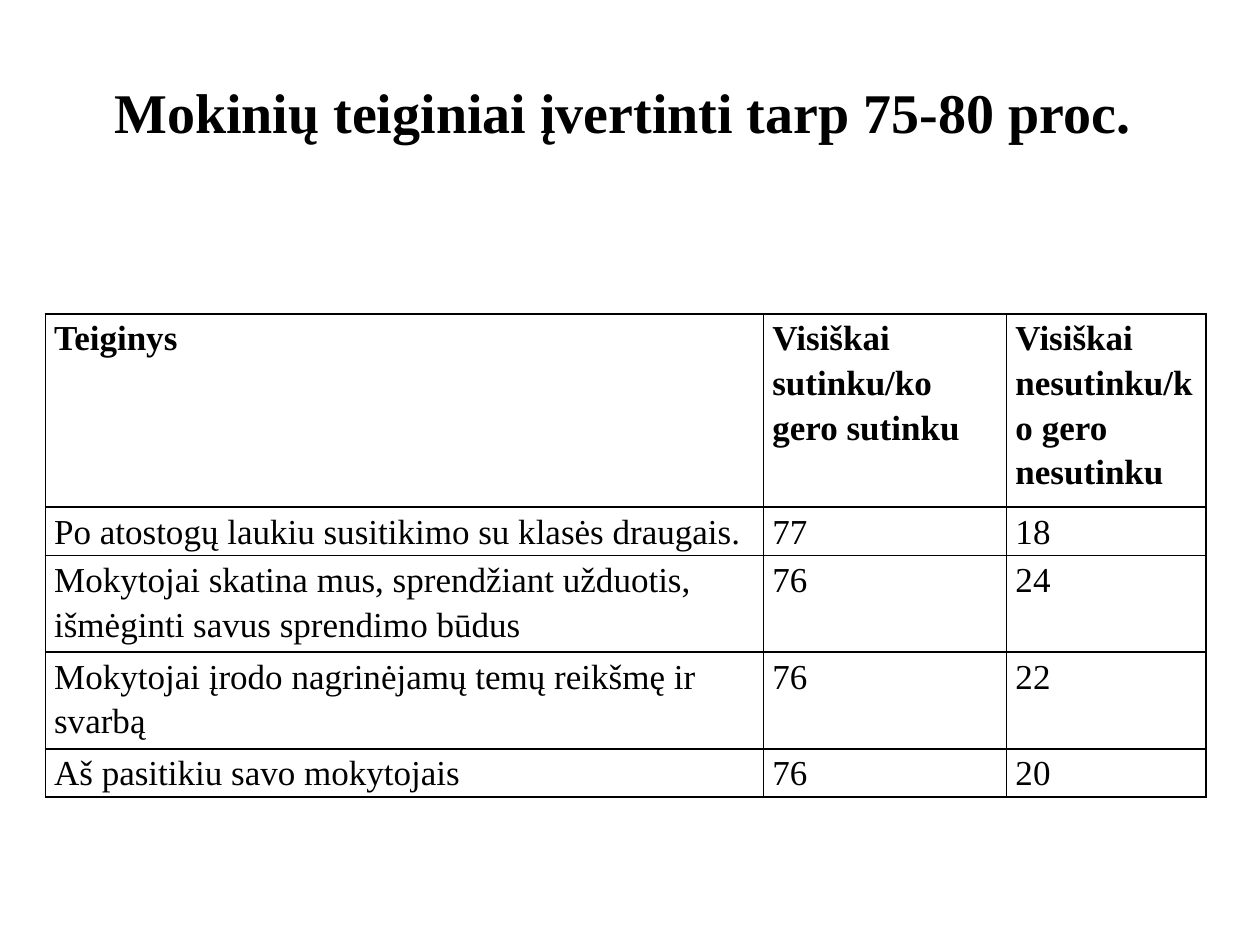
"""Build a slide with a table of pupils' statements rated between 75 and 80 percent."""
from lxml.etree import SubElement
from pptx import Presentation
from pptx.dml.color import RGBColor
from pptx.enum.text import MSO_ANCHOR, PP_ALIGN
from pptx.oxml.ns import qn
from pptx.util import Inches, Pt

TITLE = "Mokinių teiginiai įvertinti tarp 75-80 proc. "
HEADER = ("Teiginys", "Visiškai sutinku/ko gero sutinku", "Visiškai nesutinku/ko gero nesutinku")
STATEMENTS = [
    ("Po atostogų laukiu susitikimo su klasės draugais.", 77, 18),
    ("Mokytojai skatina mus, sprendžiant užduotis, išmėginti savus sprendimo būdus", 76, 24),
    ("Mokytojai įrodo nagrinėjamų temų reikšmę ir svarbą", 76, 22),
    ("Aš pasitikiu savo mokytojais", 76, 20),
]
COL_WIDTHS = (5.7, 1.93, 1.58)
TABLE_HEIGHT = 3.83
HEADER_MIN_HEIGHT = 0.04
FONT = "Times New Roman"
COLORS = {"text": "000000", "border": "000000", "background": "FFFFFF"}


def add_run(p, text, size, bold):
    r = p.add_run()
    r.text = text
    r.font.name = FONT
    r.font.size = Pt(size)
    r.font.bold = bold
    r.font.color.rgb = RGBColor.from_string(COLORS["text"])


def set_borders(cell):
    tc_pr = cell._tc.get_or_add_tcPr()
    for side in ("a:lnL", "a:lnR", "a:lnT", "a:lnB"):
        ln = SubElement(tc_pr, qn(side), w=str(Pt(1)))
        fill = SubElement(ln, qn("a:solidFill"))
        SubElement(fill, qn("a:srgbClr"), val=COLORS["border"])


def fill_cell(cell, text, bold):
    set_borders(cell)
    cell.fill.background()
    cell.margin_left = cell.margin_right = Inches(0.07)
    cell.margin_top = cell.margin_bottom = 0
    p = cell.text_frame.paragraphs[0]
    p.line_spacing = 1.15
    add_run(p, text, 20, bold)


def add_title(slide):
    tf = slide.shapes.add_textbox(Inches(0.5), Inches(0.3), Inches(9), Inches(1.17)).text_frame
    tf.word_wrap = True
    tf.vertical_anchor = MSO_ANCHOR.MIDDLE
    p = tf.paragraphs[0]
    p.alignment = PP_ALIGN.CENTER
    add_run(p, TITLE, 32, True)


def add_statements(slide):
    rows = [HEADER, *STATEMENTS]
    frame = slide.shapes.add_table(
        len(rows), len(HEADER), Inches(0.36), Inches(2.49),
        Inches(sum(COL_WIDTHS)), Inches(TABLE_HEIGHT),
    )
    table = frame.table
    table.horz_banding = False
    for col, width in zip(table.columns, COL_WIDTHS):
        col.width = Inches(width)
    for i, values in enumerate(rows):
        table.rows[i].height = Inches(0 if i else HEADER_MIN_HEIGHT)
        for j, value in enumerate(values):
            fill_cell(table.cell(i, j), str(value), i == 0)
    frame.height = Inches(TABLE_HEIGHT)


def main():
    prs = Presentation()
    prs.slide_width, prs.slide_height = Inches(10), Inches(7.5)
    slide = prs.slides.add_slide(prs.slide_layouts[6])
    slide.background.fill.solid()
    slide.background.fill.fore_color.rgb = RGBColor.from_string(COLORS["background"])
    add_title(slide)
    add_statements(slide)
    prs.save("out.pptx")


if __name__ == "__main__":
    main()
